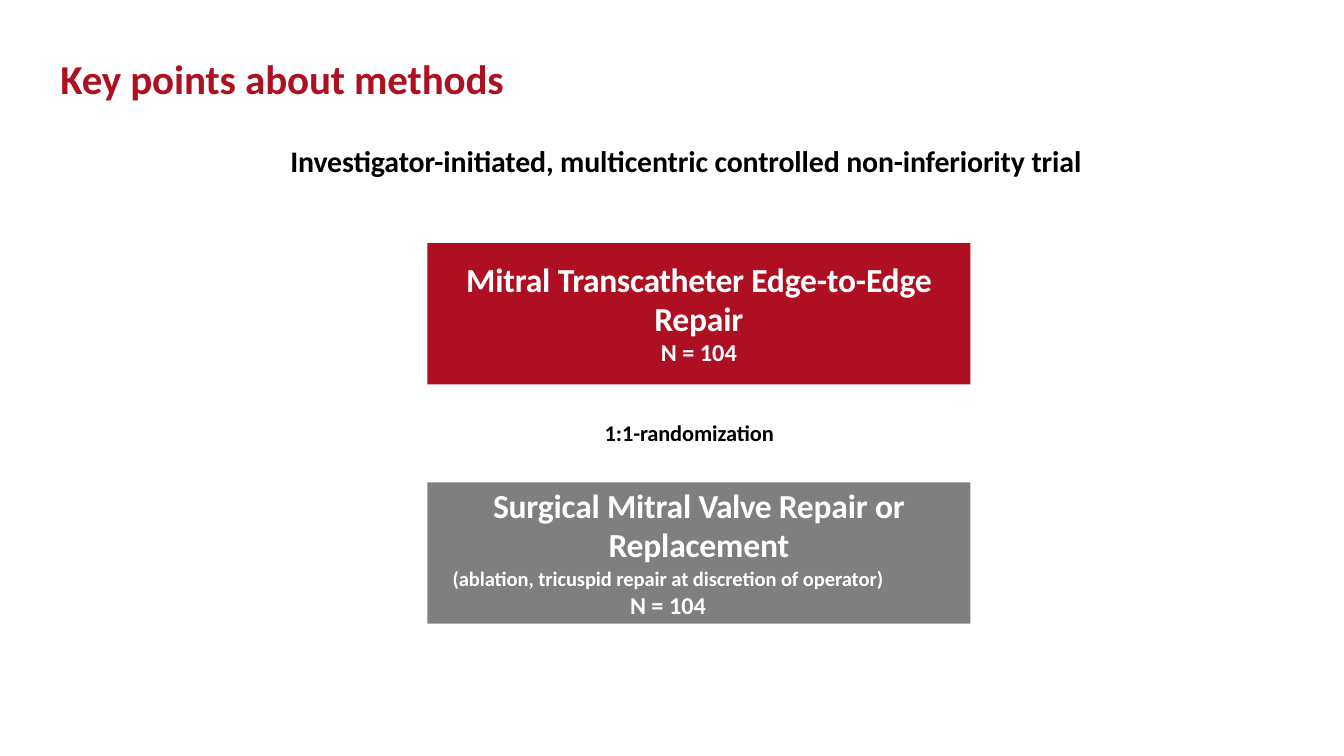
from pptx import Presentation
from pptx.dml.color import RGBColor
from pptx.enum.shapes import MSO_SHAPE
from pptx.enum.text import MSO_ANCHOR, PP_ALIGN
from pptx.util import Inches, Pt

THEME = {
    "font": "Calibri",
    "red": "AE1022", "gray": "7F7F7F", "white": "FFFFFF", "black": "000000",
    "title": 22, "lead": 16, "arm": 18, "count": 13, "note": 11, "label": 12,
}

# Content: each run is (text, letter spacing in points)
TITLE = [("Key ", -0.15), ("points about methods", -0.06)]
LABELS = [  # runs, size, (left, top, width, height)
    ([("Investigator-initiated, multicentric controlled non-inferiority trial", -0.06)],
     "lead", (2.15, 1.05, 5.98, 0.29)),
    ([("1:1-randomization", -0.06)], "label", (4.49, 3.11, 1.3, 0.23)),
]
COUNT = [("N = 104", 0)]
ARMS = [  # lines: runs, size, left margin, right margin, line height, space before
    {"fill": "red", "top": 1.81, "inset": 0.12, "lines": [
        ([("Mitral ", -0.1), ("Transcatheter ", -0.2), ("Edge-to-Edge Repair", -0.1)],
         "arm", 0.26, 0.26, 21.1, 0),
        (COUNT, "count", 0, 0, 15.2, 0)]},
    {"fill": "gray", "top": 3.59, "inset": 0.03, "lines": [
        ([("Surgical Mitral ", -0.1), ("Valve ", -0.3), ("Repair or Replacement", -0.1)],
         "arm", 0.46, 0.46, 20.9, 0),
        ([("(ablation, tricuspid repair at discretion of operator)", -0.06)],
         "note", 0, 0.46, 13.1, 0.9),
        (COUNT, "count", 0, 0.46, 15.4, 0)]},
]
ARM_LEFT, ARM_WIDTH, ARM_HEIGHT = 3.18, 4.04, 1.05


def color(name):
    return RGBColor.from_string(THEME[name])


def set_frame(tf, top):
    tf.word_wrap = True
    tf.vertical_anchor = MSO_ANCHOR.TOP
    tf.margin_left = tf.margin_right = tf.margin_bottom = 0
    tf.margin_top = Inches(top)


def set_margins(p, left, right=0):
    pPr = p._p.get_or_add_pPr()
    pPr.set("marL", str(Inches(left)))
    pPr.set("marR", str(Inches(right)))
    pPr.set("indent", "0")


def add_runs(p, runs, size, ink):
    for text, spacing in runs:
        r = p.add_run()
        r.text = text
        r.font.name = THEME["font"]
        r.font.size = Pt(THEME[size])
        r.font.bold = True
        r.font.color.rgb = color(ink)
        r._r.get_or_add_rPr().set("spc", str(round(spacing * 100)))


def fill_line(sp, runs, size, ink):
    set_frame(sp.text_frame, 0.01)
    p = sp.text_frame.paragraphs[0]
    p.alignment = PP_ALIGN.LEFT
    set_margins(p, 0.01)
    add_runs(p, runs, size, ink)


prs = Presentation()
prs.slide_width = Inches(10)
prs.slide_height = prs.slide_width * 9 // 16
slide = prs.slides.add_slide(prs.slide_layouts[5])

# Title
title = slide.shapes.title
title.left, title.top, title.width, title.height = map(Inches, (0.44, 0.39, 3.35, 0.39))
fill_line(title, TITLE, "title", "red")

# Treatment arms
for arm in ARMS:
    sp = slide.shapes.add_shape(MSO_SHAPE.RECTANGLE, *map(
        Inches, (ARM_LEFT, arm["top"], ARM_WIDTH, ARM_HEIGHT)))
    sp.shadow.inherit = False
    sp.fill.solid()
    sp.fill.fore_color.rgb = color(arm["fill"])
    sp.line.fill.background()
    tf = sp.text_frame
    set_frame(tf, arm["inset"])
    for i, (runs, size, left, right, height, before) in enumerate(arm["lines"]):
        p = tf.add_paragraph() if i else tf.paragraphs[0]
        p.alignment = PP_ALIGN.CENTER
        p.line_spacing = Pt(height)
        if before:
            p.space_before = Pt(before)
        set_margins(p, left, right)
        add_runs(p, runs, size, "white")

# Trial description and randomization label
for runs, size, box in LABELS:
    fill_line(slide.shapes.add_textbox(*map(Inches, box)), runs, size, "black")

prs.save("out.pptx")
